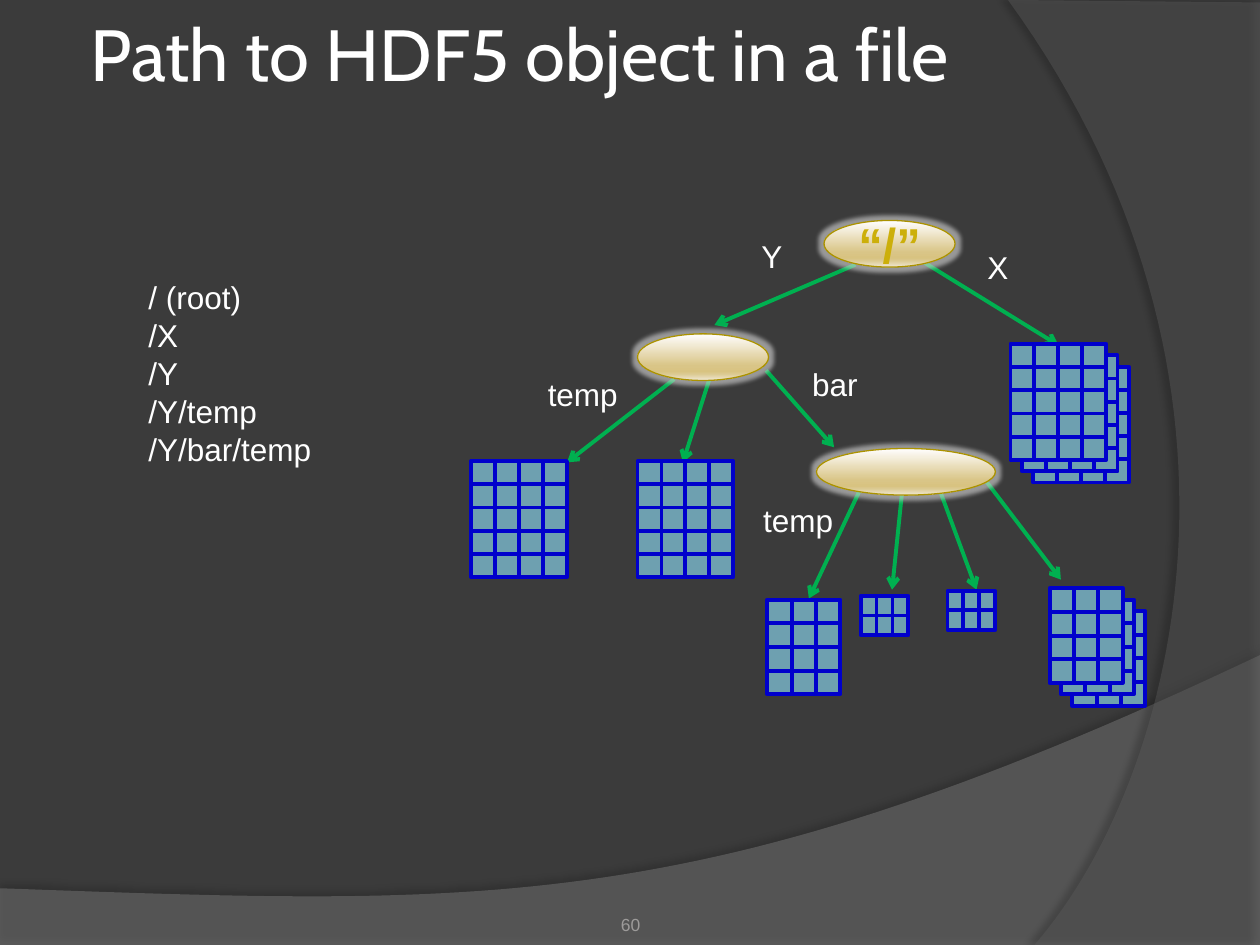
import lxml.etree
import pptx
import pptx.dml.color
import pptx.enum.shapes
import pptx.enum.text
import pptx.oxml.ns
import pptx.util

COLS, ROWS = 100, 75
WIDTH, HEIGHT = pptx.util.Inches(10), pptx.util.Inches(7.5)
SHAPE = pptx.enum.shapes.MSO_SHAPE
ALIGN = pptx.enum.text.PP_ALIGN
ANCHOR = pptx.enum.text.MSO_ANCHOR
GOLD = [(0, "FFFEFE"), (68, "D9C587"), (81, "D8C381"), (86, "DBC990"), (100, "EFE7D3")]
GREEN, BLUE, TEAL, WHITE = "00B050", "0000CC", "6EA0B0", "FFFFFF"


def rgb(value):
    return pptx.dml.color.RGBColor.from_string(value)


def col(n):
    return round(WIDTH * n / COLS)


def row(n):
    return round(HEIGHT * n / ROWS)


def box(x, y, w, h):
    return col(x), row(y), col(w), row(h)


def child(parent, tag, **attrs):
    values = {k: str(v) for k, v in attrs.items()}
    return lxml.etree.SubElement(parent, pptx.oxml.ns.qn(tag), values)


def add_color(parent, color, alpha=100):
    clr = child(parent, "a:srgbClr", val=color)
    if alpha < 100:
        child(clr, "a:alpha", val=alpha * 1000)


def add_effect(sp, tag=None, color=None, alpha=100, **attrs):
    effects = child(sp._element.spPr, "a:effectLst")
    if tag:
        add_color(child(effects, tag, **attrs), color, alpha)


def add_run(p, text, size, color, font="Arial", bold=False):
    r = p.add_run()
    r.text = text
    r.font.size = pptx.util.Pt(size)
    r.font.name = font
    r.font.bold = bold
    r.font.color.rgb = rgb(color)


def add_text(s, place, lines, size=18, color=WHITE, align=ALIGN.CENTER, level=0):
    tf = s.shapes.add_textbox(*box(*place)).text_frame
    tf.word_wrap = True
    for i, line in enumerate(lines):
        p = tf.add_paragraph() if i else tf.paragraphs[0]
        p.alignment = align
        p.level = level
        add_run(p, line, size, color)
    return tf


def bezier(a, b, c, d, steps=60):
    for i in range(1, steps + 1):
        t = i / steps
        u = 1 - t
        yield tuple(u**3 * m + 3 * u * u * t * n + 3 * u * t * t * o + t**3 * q
                    for m, n, o, q in zip(a, b, c, d))


def add_swoosh(s, corners, curve, color, alpha, shadow_alpha, distance, angle):
    points = [*corners, *bezier(corners[-1], *curve)]
    start, *rest = [(col(x), row(y)) for x, y in points]
    builder = s.shapes.build_freeform(*start)
    builder.add_line_segments(rest, close=True)
    sp = builder.convert_to_shape()
    sp.fill.solid()
    sp.fill.fore_color.rgb = rgb(color)
    clr = sp._element.spPr.find(".//" + pptx.oxml.ns.qn("a:srgbClr"))
    child(clr, "a:alpha", val=alpha * 1000)
    sp.line.fill.background()
    add_effect(sp, "a:outerShdw", "000000", shadow_alpha, blurRad=pptx.util.Pt(4),
               dist=pptx.util.Pt(distance), dir=angle * 60000)


def add_line(shapes, x1, y1, x2, y2, color, arrow=False):
    c = shapes.add_connector(pptx.enum.shapes.MSO_CONNECTOR.STRAIGHT,
                             col(x1), row(y1), col(x2), row(y2))
    c.line.color.rgb = rgb(color)
    c.line.width = pptx.util.Pt(2.25)
    if arrow:
        child(c.line._get_or_add_ln(), "a:tailEnd", type="arrow")
    add_effect(c)


def add_node(s, x, y, w, text=""):
    sp = s.shapes.add_shape(SHAPE.OVAL, *box(x, y, w, 3.7))
    sp.fill.gradient()
    sp.fill.gradient_angle = 270
    stops = sp._element.spPr.find(".//" + pptx.oxml.ns.qn("a:gsLst"))
    for old in list(stops):
        stops.remove(old)
    for pos, color in GOLD:
        add_color(child(stops, "a:gs", pos=pos * 1000), color)
    sp.line.color.rgb = rgb("AB9200")
    sp.line.width = pptx.util.Pt(0.75)
    add_effect(sp, "a:glow", "D9D9D9", 60, rad=pptx.util.Pt(5))
    if text:
        tf = sp.text_frame
        tf.word_wrap = False
        tf.vertical_anchor = ANCHOR.MIDDLE
        p = tf.paragraphs[0]
        p.alignment = ALIGN.CENTER
        add_run(p, text, 28, "CCAF0A", bold=True)


def add_dataset(s, x, y, columns, rows, w, h):
    shapes = s.shapes.add_group_shape().shapes
    sp = shapes.add_shape(SHAPE.RECTANGLE, *box(x, y, w, h))
    sp.shadow.inherit = False
    sp.fill.solid()
    sp.fill.fore_color.rgb = rgb(TEAL)
    sp.line.color.rgb = rgb(BLUE)
    sp.line.width = pptx.util.Pt(2.25)
    for i in range(1, columns):
        across = x + w * i / columns
        add_line(shapes, across, y, across, y + h, BLUE)
    for i in range(1, rows):
        down = y + h * i / rows
        add_line(shapes, x + w, down, x, down, BLUE)


def add_stack(s, x, y, *size):
    for depth in (2, 1, 0):
        add_dataset(s, x + 0.9 * depth, y + 0.9 * depth, *size)


def add_title(s, text):
    title = s.shapes.title
    title.left, title.top, title.width, title.height = box(6.7, 0.8, 86.7, 6.7)
    tf = title.text_frame
    tf.auto_size = pptx.enum.text.MSO_AUTO_SIZE.NONE
    tf.vertical_anchor = ANCHOR.MIDDLE
    tf.margin_left = tf.margin_right = pptx.util.Inches(0.05)
    p = tf.paragraphs[0]
    p.alignment = ALIGN.LEFT
    add_run(p, text, 41.4, WHITE, "Cabin")


def main():
    prs = pptx.Presentation()
    prs.slide_width, prs.slide_height = WIDTH, HEIGHT
    s = prs.slides.add_slide(prs.slide_layouts[5])
    s.background.fill.solid()
    s.background.fill.fore_color.rgb = rgb("3B3B3B")

    add_swoosh(s, [(0, 70.5), (0, 75), (100, 75), (100, 52)],
               [(55.9, 72.9), (39.1, 71.9), (0, 70.5)], "7F7F7F", 45, 35, 3.5, 270)
    add_swoosh(s, [(100, 0.2), (100, 75), (82.1, 75)],
               [(93.5, 61.9), (101.8, 30), (80, 0)], "5E5E5E", 40, 45, 4, 180)
    add_title(s, "Path to HDF5 object in a file")

    for ends in [(73.3, 20.8, 84, 27.4), (67.9, 21, 56.7, 25.8),
                 (56.3, 30.1, 54.2, 36.7), (53.5, 30.1, 45, 36.7),
                 (60.8, 29.4, 66.2, 35.5), (71.6, 39, 70.8, 46.8),
                 (68.2, 39, 64.2, 47.5), (74.4, 38.4, 77.5, 46.8),
                 (78.2, 38.1, 84.2, 46)]:
        add_line(s.shapes, *ends, GREEN, arrow=True)

    large, medium, small = (4, 5, 7.6, 9.2), (3, 4, 5.8, 7.5), (3, 2, 3.8, 3.1)
    add_stack(s, 80.2, 27.3, *large)
    add_stack(s, 83.3, 46.7, *medium)
    for x, y, size in [(37.4, 36.6, large), (50.6, 36.6, large), (60.9, 47.6, medium),
                       (68.3, 47.3, small), (75.2, 46.9, small)]:
        add_dataset(s, x, y, *size)

    add_node(s, 65.4, 17.5, 10.4, "“/”")
    add_node(s, 50.6, 26.5, 10.4)
    add_node(s, 64.8, 35.6, 14.2)

    for label, x, y, w in [("X", 76.7, 19.2, 5), ("Y", 55, 18.3, 12.5),
                           ("temp", 40, 29.3, 12.5), ("bar", 60, 28.5, 12.5),
                           ("temp", 57.5, 39.3, 11.7)]:
        add_text(s, (x, y, w, 4), [label])

    paths = add_text(s, (5.8, 18.5, 35.8, 23.7),
                     ["/ (root)", "/X", "/Y", "/Y/temp", "/Y/bar/temp"],
                     align=ALIGN.LEFT, level=1)
    paths.vertical_anchor = ANCHOR.MIDDLE
    paths.margin_bottom = pptx.util.Inches(0.2)

    number = add_text(s, (34.2, 70.2, 31.7, 4), ["60"], 10, "9D9B9A")
    number.vertical_anchor = ANCHOR.BOTTOM
    number.margin_left = number.margin_right = number.margin_bottom = 0

    prs.save("out.pptx")


if __name__ == "__main__":
    main()
